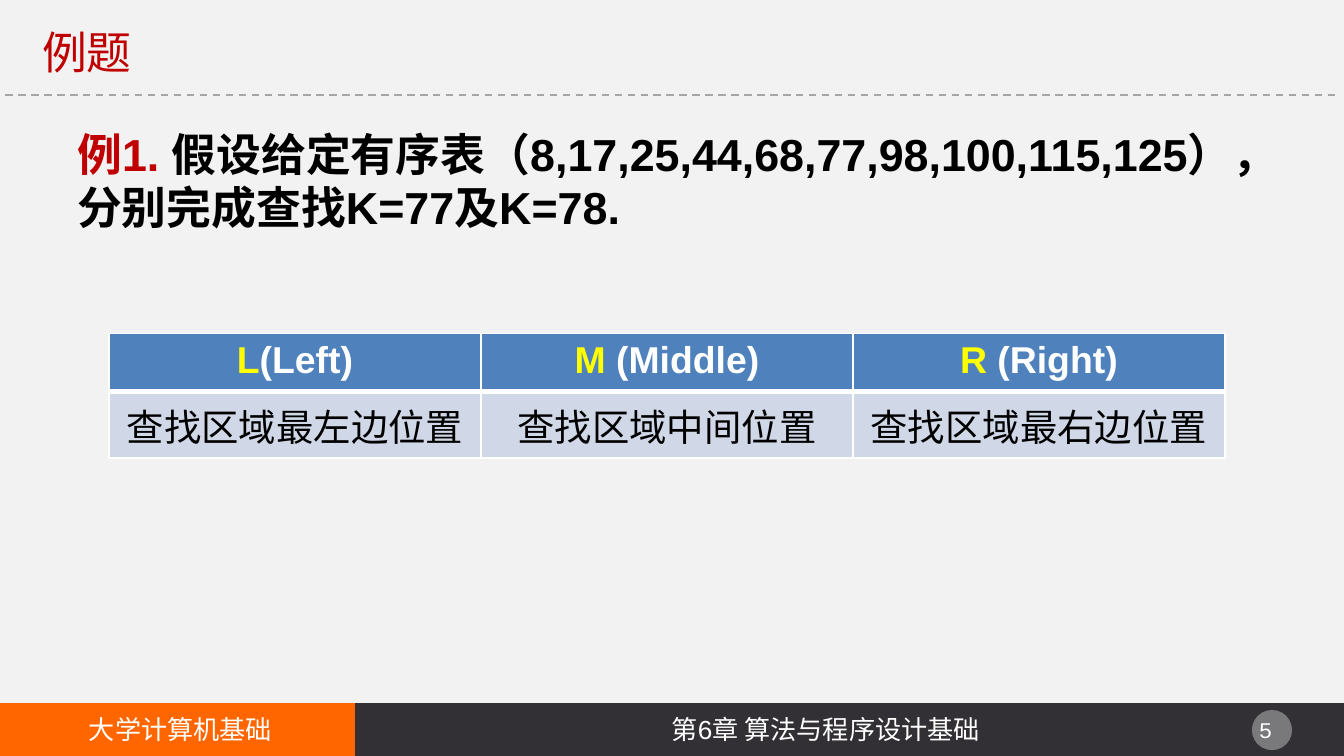
from dataclasses import dataclass

from lxml import etree
from pptx import Presentation
from pptx.dml.color import RGBColor
from pptx.enum.dml import MSO_LINE
from pptx.enum.shapes import MSO_CONNECTOR, MSO_SHAPE
from pptx.enum.text import MSO_ANCHOR, PP_ALIGN
from pptx.oxml.ns import qn
from pptx.util import Cm, Pt

CENTER = PP_ALIGN.CENTER
MIDDLE = MSO_ANCHOR.MIDDLE
BOTTOM = MSO_ANCHOR.BOTTOM
RECTANGLE = MSO_SHAPE.RECTANGLE
OVAL = MSO_SHAPE.OVAL
STRAIGHT = MSO_CONNECTOR.STRAIGHT
DASH = MSO_LINE.DASH


@dataclass(frozen=True)
class Theme:
    background: str = "F2F2F2"
    dark: str = "323034"
    orange: str = "FF6600"
    red: str = "C00000"
    yellow: str = "FFFF00"
    white: str = "FFFFFF"
    black: str = "000000"
    gray: str = "A6A6A6"
    header: str = "4F81BD"
    body: str = "D0D8E8"
    heading_size: int = 24
    table_size: int = 20
    footer_size: int = 14
    number_size: int = 12


theme = Theme()


def write(para, text, size, color, bold=False, font="Arial", spacing=None):
    span = para.add_run()
    span.text = text
    span.font.size = Pt(size)
    span.font.bold = bold
    span.font.name = font
    span.font.color.rgb = RGBColor.from_string(color)
    if spacing is not None:
        span.font._element.set("spc", str(int(spacing * 100)))


def set_frame(frame, left=0.19, anchor=None):
    frame.word_wrap = True
    frame.margin_left = Cm(left)
    frame.margin_right = Cm(0.19)
    frame.margin_top = frame.margin_bottom = Cm(0.1)
    if anchor is not None:
        frame.vertical_anchor = anchor
    return frame.paragraphs[0]


deck = Presentation()
deck.slide_width = Cm(25.4)
deck.slide_height = Cm(14.29)
page = deck.slides.add_slide(deck.slide_layouts[6])
page.background.fill.solid()
page.background.fill.fore_color.rgb = RGBColor.from_string(theme.background)

footers = [
    (5.51, 19.89, theme.dark, 0.5, "第6章 算法与程序设计基础"),
    (0, 6.71, theme.orange, 0.31, "大学计算机基础"),
]
for left, width, color, inset, text in footers:
    bar = page.shapes.add_shape(RECTANGLE, Cm(left), Cm(13.29), Cm(width), Cm(1))
    bar.shadow.inherit = False
    bar.fill.solid()
    bar.fill.fore_color.rgb = RGBColor.from_string(color)
    bar.line.fill.background()
    para = set_frame(bar.text_frame, inset, MIDDLE)
    para.alignment = CENTER
    write(para, text, theme.footer_size, theme.white)

badge = page.shapes.add_shape(OVAL, Cm(23.66), Cm(13.42), Cm(0.76), Cm(0.76))
badge.shadow.inherit = False
badge.fill.solid()
badge.fill.fore_color.rgb = RGBColor.from_string(theme.white)
badge.line.fill.background()
badge_color = badge._element.spPr.find(qn("a:solidFill"))[0]
etree.SubElement(badge_color, qn("a:alpha"), val="35000")

number_box = page.shapes.add_textbox(Cm(23.37), Cm(13.44), Cm(1.35), Cm(0.71))
para = set_frame(number_box.text_frame)
para.alignment = CENTER
write(para, "5 ", theme.number_size, theme.white, font="Courier New")

divider = page.shapes.add_connector(STRAIGHT, Cm(0.1), Cm(1.8), Cm(25.32), Cm(1.8))
divider.line.color.rgb = RGBColor.from_string(theme.gray)
divider.line.width = Pt(1)
divider.line.dash_style = DASH
etree.SubElement(divider._element.spPr, qn("a:effectLst"))

title_box = page.shapes.add_textbox(Cm(0.61), Cm(0.23), Cm(22.61), Cm(1.35))
para = set_frame(title_box.text_frame, anchor=BOTTOM)
write(para, "例题", theme.heading_size, theme.red, font="Montserrat", spacing=-0.5)

body_box = page.shapes.add_textbox(Cm(1.27), Cm(2.29), Cm(22.81), Cm(11.02))
para = set_frame(body_box.text_frame)
para.space_after = Pt(4.5)
write(para, "例1. ", theme.heading_size, theme.red, bold=True)
write(
    para,
    "假设给定有序表（8,17,25,44,68,77,98,100,115,125），分别完成查找K=77及K=78.",
    theme.heading_size,
    theme.black,
    bold=True,
)

columns = [
    ("L", "(Left)", "查找区域最左边位置"),
    ("M ", "(Middle)", "查找区域中间位置"),
    ("R ", "(Right)", "查找区域最右边位置"),
]
table_frame = page.shapes.add_table(2, 3, Cm(2.06), Cm(6.3), Cm(21.09), Cm(2.19))
table = table_frame.table
table.horz_banding = False
table.rows[0].height = Cm(0.94)
table.rows[1].height = Cm(1.25)
for index, (letter, meaning, description) in enumerate(columns):
    table.columns[index].width = Cm(7.03)
    header_cell = table.cell(0, index)
    body_cell = table.cell(1, index)
    for cell, color, thick in (
        (header_cell, theme.header, "lnB"),
        (body_cell, theme.body, "lnT"),
    ):
        properties = cell._tc.get_or_add_tcPr()
        for side in ("lnL", "lnR", "lnT", "lnB"):
            width = Pt(3 if side == thick else 1)
            border = etree.SubElement(properties, qn(f"a:{side}"), w=str(width))
            fill = etree.SubElement(border, qn("a:solidFill"))
            etree.SubElement(fill, qn("a:srgbClr"), val=theme.white)
        cell.fill.solid()
        cell.fill.fore_color.rgb = RGBColor.from_string(color)
        cell.text_frame.paragraphs[0].alignment = CENTER
    para = header_cell.text_frame.paragraphs[0]
    write(para, letter, theme.table_size, theme.yellow, bold=True)
    write(para, meaning, theme.table_size, theme.white, bold=True)
    para = body_cell.text_frame.paragraphs[0]
    write(para, description, theme.table_size, theme.black)

deck.save("out.pptx")
